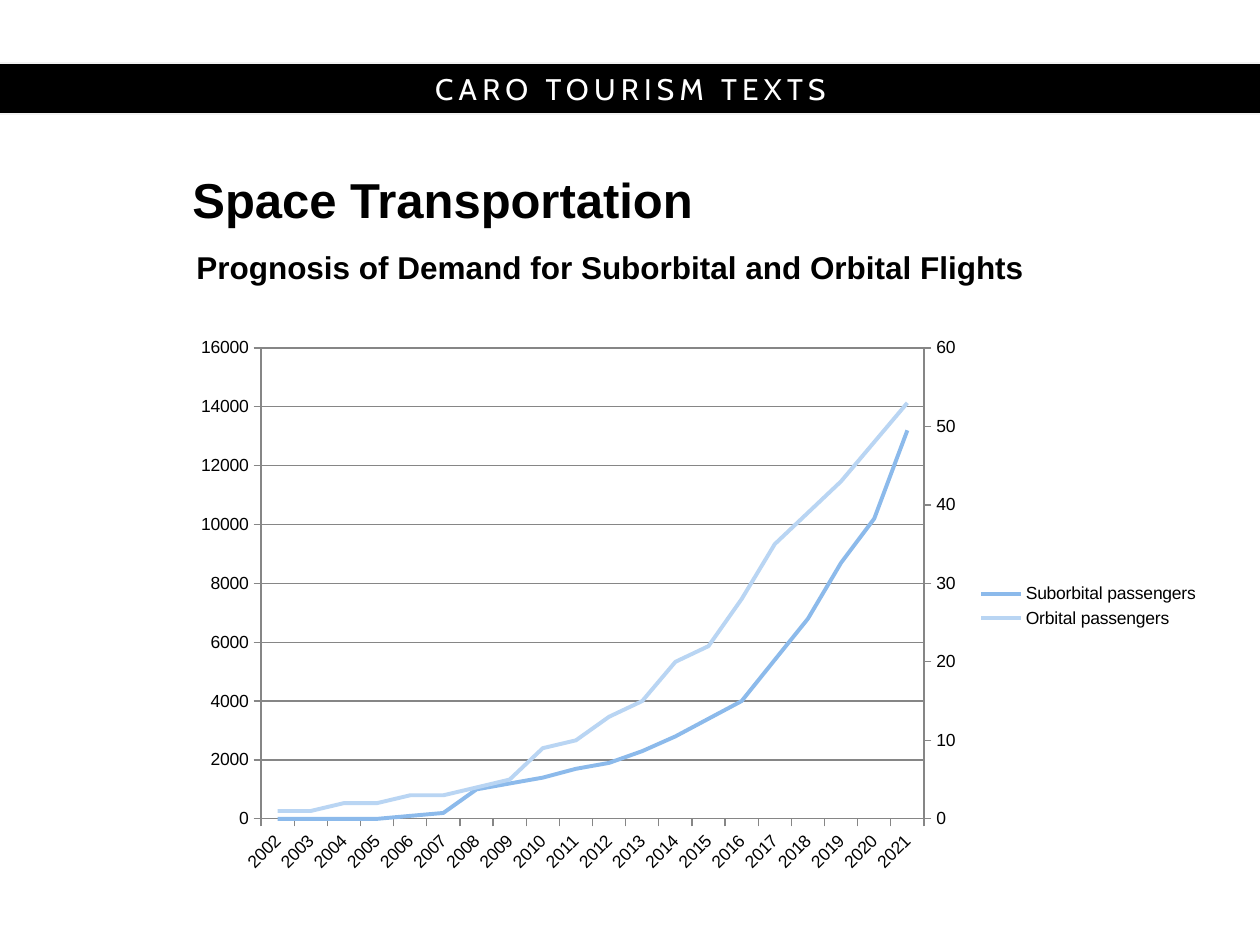
"""Build a slide with a two-axis line chart of space flight demand."""
from copy import deepcopy

from lxml import etree
from pptx import Presentation, util as u
from pptx.chart.data import CategoryChartData
from pptx.dml.color import RGBColor
from pptx.enum import chart as ch, shapes, text
from pptx.oxml.ns import qn

PX = 914400 / 126
COLORS = {"black": "000000", "white": "FFFFFF", "edge": "F2F2F2", "axis": "868686"}
BAND = ("CARO TOURISM TEXTS", (-10, 63, 1281, 51))
HEADINGS = [
    ("Space Transportation", (180, 170, 992, 61), 28, 32),
    ("Prognosis of Demand for Suborbital and Orbital Flights", (184, 239, 862, 55), 18, None),
]
CHART_BOX = (180, 328, 1032, 556)
PLOT_BOX = (261, 348, 663, 471)
YEARS = [str(year) for year in range(2002, 2022)]
SERIES = [
    ("Suborbital passengers", "8CBAEB",
     [0, 0, 0, 0, 100, 200, 1000, 1200, 1400, 1700,
      1900, 2300, 2800, 3400, 4000, 5400, 6800, 8700, 10200, 13200]),
    ("Orbital passengers", "B9D5F3",
     [1, 1, 2, 2, 3, 3, 4, 5, 9, 10, 13, 15, 20, 22, 28, 35, 39, 43, 48, 53]),
]
LEFT_SCALE = (16000, 2000)
RIGHT_SCALE = (60, 10)


def emu(box):
    return [u.Emu(round(length * PX)) for length in box]


def color(name):
    return RGBColor.from_string(COLORS.get(name, name))


def write(shape, content, font_name, size, color_name, bold=False):
    frame = shape.text_frame
    frame.word_wrap = True
    frame.vertical_anchor = text.MSO_ANCHOR.MIDDLE
    paragraph = frame.paragraphs[0]
    run = paragraph.add_run()
    run.text = content
    font = run.font
    font.name, font.size, font.bold = font_name, u.Pt(size), bold
    font.color.rgb = color(color_name)
    return paragraph, run


def add_band(slide):
    content, box = BAND
    band = slide.shapes.add_shape(shapes.MSO_SHAPE.RECTANGLE, *emu(box))
    band.shadow.inherit = False
    band.fill.solid()
    band.fill.fore_color.rgb = color("black")
    band.line.color.rgb = color("edge")
    band.line.width = u.Pt(0.75)
    paragraph, run = write(band, content, "Cabin", 17, "white")
    paragraph.alignment = text.PP_ALIGN.CENTER
    run.font._element.set("spc", "300")


def style_axis(axis):
    axis.major_tick_mark = ch.XL_TICK_MARK.OUTSIDE
    axis.minor_tick_mark = ch.XL_TICK_MARK.NONE
    axis.tick_labels.font.size = u.Pt(10)
    axis.format.line.color.rgb = color("axis")
    axis.format.line.width = u.Pt(0.75)


def set_values(element, values):
    for tag, value in values.items():
        element.find(".//" + qn(f"c:{tag}")).set("val", str(value))


def place_plot(plot_area):
    for old in plot_area.findall(qn("c:layout")):
        plot_area.remove(old)
    layout = etree.Element(qn("c:layout"))
    manual = etree.SubElement(layout, qn("c:manualLayout"))
    left, top, width, height = CHART_BOX
    values = {
        "layoutTarget": "inner", "xMode": "edge", "yMode": "edge",
        "x": (PLOT_BOX[0] - left) / width, "y": (PLOT_BOX[1] - top) / height,
        "w": PLOT_BOX[2] / width, "h": PLOT_BOX[3] / height,
    }
    for tag, value in values.items():
        etree.SubElement(manual, qn(f"c:{tag}")).set("val", str(value))
    plot_area.insert(0, layout)


def move_to_right_axis(plot_area):
    left_plot = plot_area.find(qn("c:lineChart"))
    category_axis, value_axis = (plot_area.find(qn(f"c:{tag}")) for tag in ("catAx", "valAx"))
    right_plot, right_category, right_value = map(deepcopy, (left_plot, category_axis, value_axis))
    left_plot.remove(left_plot.findall(qn("c:ser"))[1])
    right_plot.remove(right_plot.find(qn("c:ser")))
    for axis_id, number in zip(right_plot.findall(qn("c:axId")), (5001, 5002)):
        axis_id.set("val", str(number))
    set_values(right_category, {"axId": 5001, "crossAx": 5002, "delete": 1})
    maximum, step = RIGHT_SCALE
    set_values(right_value, {"axId": 5002, "crossAx": 5001, "axPos": "r",
                             "crosses": "max", "max": maximum, "majorUnit": step})
    right_value.remove(right_value.find(qn("c:majorGridlines")))
    left_plot.addnext(right_plot)
    value_axis.addnext(right_value)
    right_value.addnext(right_category)


def add_demand_chart(slide):
    data = CategoryChartData()
    data.categories = YEARS
    for name, _, values in SERIES:
        data.add_series(name, values)
    chart = slide.shapes.add_chart(ch.XL_CHART_TYPE.LINE, *emu(CHART_BOX), data).chart
    chart.has_title = False
    chart.font.name, chart.font.size = "Arial", u.Pt(18)
    chart.font.color.rgb = color("black")
    chart.has_legend = True
    chart.legend.position = ch.XL_LEGEND_POSITION.RIGHT
    chart.legend.include_in_layout = False
    chart.legend.font.size = u.Pt(10)

    plot = chart.plots[0]
    plot.vary_by_categories = False
    for series, (_, line_color, _) in zip(plot.series, SERIES):
        series.smooth = False
        series.format.line.color.rgb = color(line_color)
        series.format.line.width = u.Pt(2.25)

    category_axis, value_axis = chart.category_axis, chart.value_axis
    style_axis(category_axis)
    style_axis(value_axis)
    category_axis._element.find(".//" + qn("a:bodyPr")).set("rot", "-2700000")
    value_axis.minimum_scale = 0
    value_axis.maximum_scale, value_axis.major_unit = LEFT_SCALE
    value_axis.has_major_gridlines = True
    grid = value_axis.major_gridlines.format.line
    grid.color.rgb, grid.width = color("axis"), u.Pt(0.75)

    plot_area = chart._chartSpace.find(".//" + qn("c:plotArea"))
    place_plot(plot_area)
    move_to_right_axis(plot_area)


def main():
    presentation = Presentation()
    presentation.slide_width, presentation.slide_height = u.Inches(10), u.Inches(7.5)
    slide = presentation.slides.add_slide(presentation.slide_layouts[6])
    add_band(slide)
    add_demand_chart(slide)
    for content, box, size, spacing in HEADINGS:
        heading = slide.shapes.add_textbox(*emu(box))
        paragraph, _ = write(heading, content, "Arial", size, "black", bold=True)
        if spacing:
            paragraph.line_spacing = u.Pt(spacing)
    presentation.save("out.pptx")


if __name__ == "__main__":
    main()
